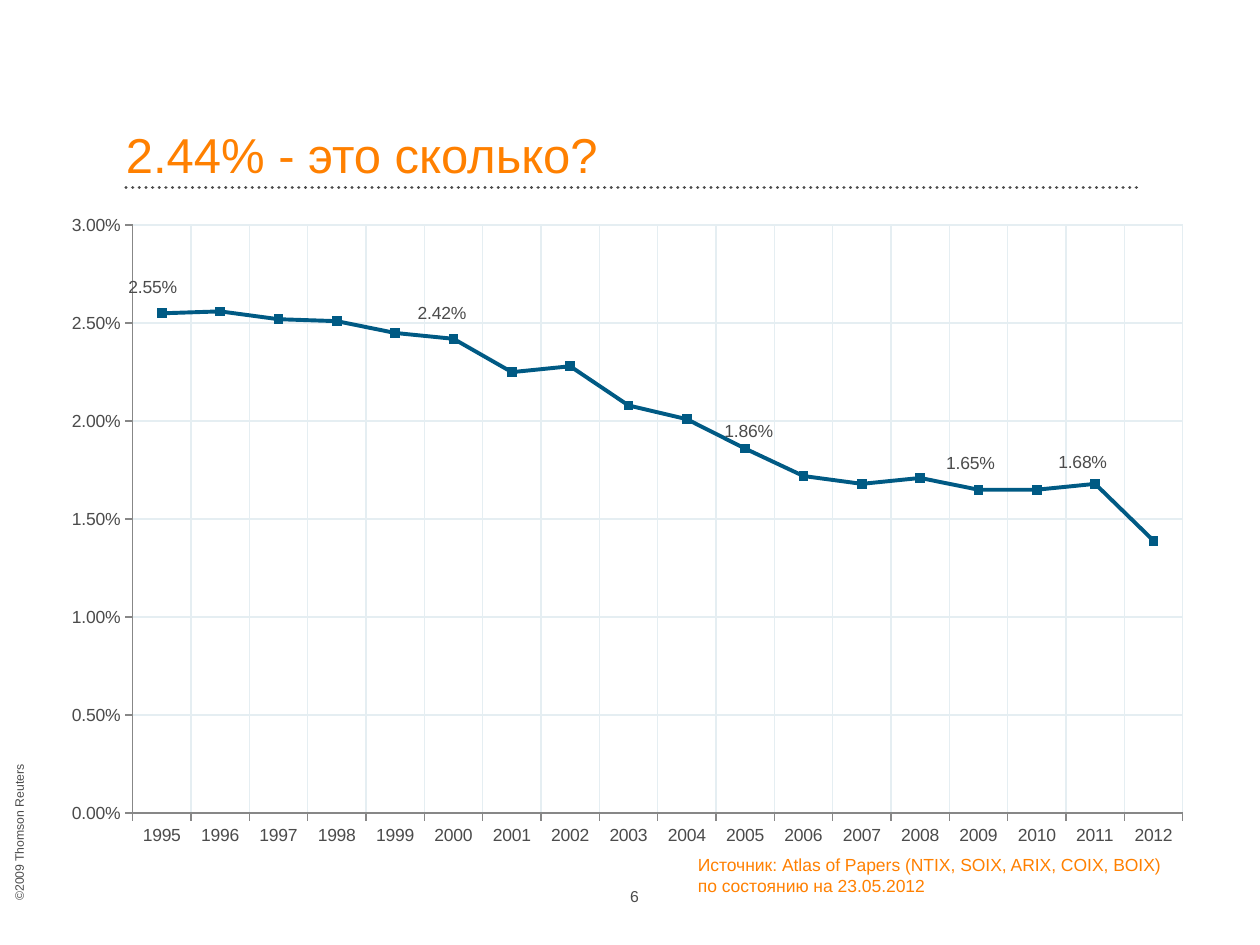
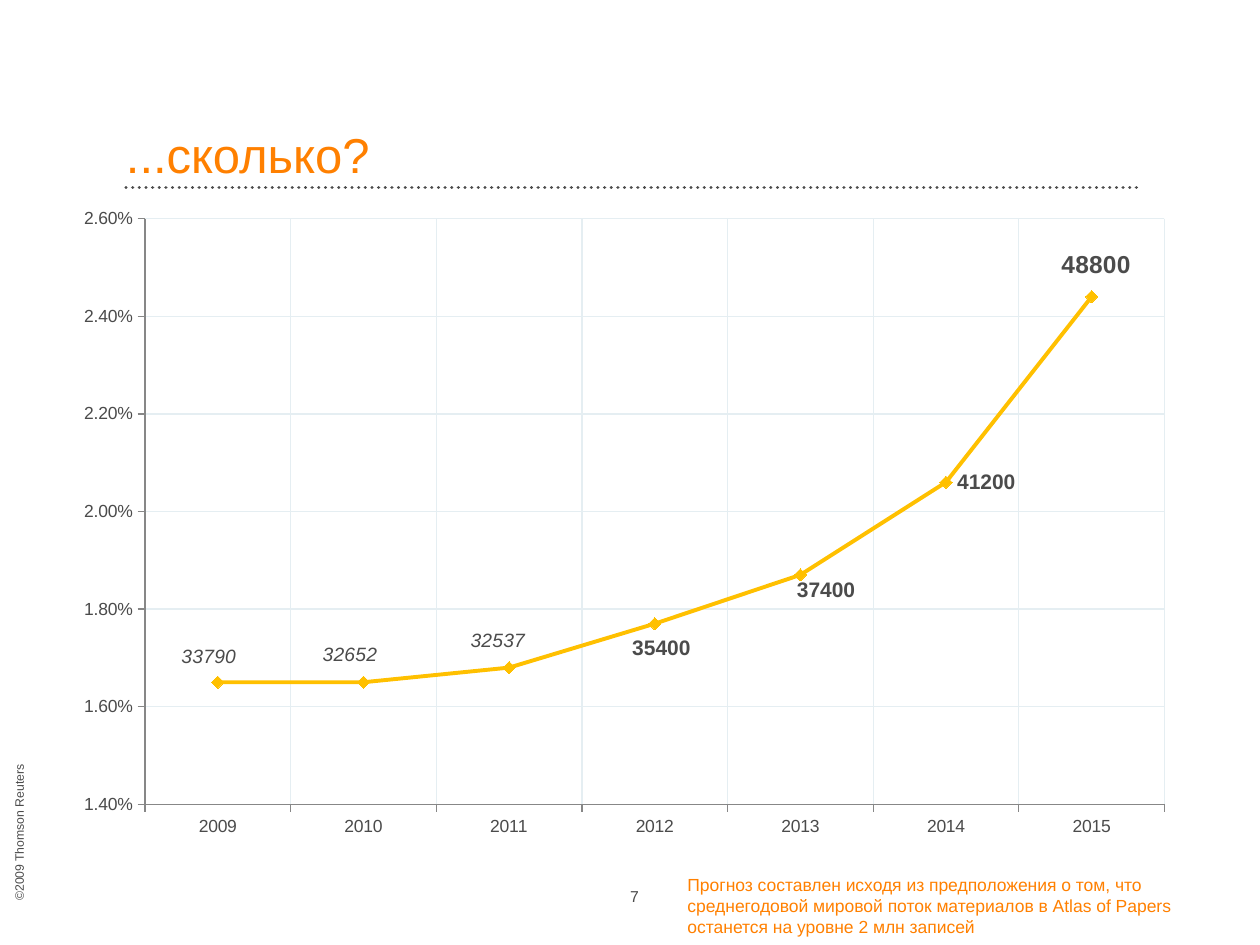
from pptx import Presentation
from pptx import util as u
from pptx.chart import data as chart_data
from pptx.dml.color import RGBColor
from pptx.enum import chart as charts, dml, shapes, text
from pptx.oxml import parse_xml
from pptx.oxml.ns import nsdecls

ORANGE = RGBColor(0xFF, 0x80, 0x00)
GREY = RGBColor(0x4B, 0x4B, 0x4B)
AXIS_GREY = RGBColor(0x87, 0x87, 0x87)
GRID_BLUE = RGBColor(0xE5, 0xEE, 0xF2)
BLUE = RGBColor(0x00, 0x5A, 0x84)
YELLOW = RGBColor(0xFF, 0xC0, 0x00)
FONT = "Arial"
PERCENT = "0.00%"
DATABASE = "Atlas of Papers"

ABOVE = charts.XL_LABEL_POSITION.ABOVE
BELOW = charts.XL_LABEL_POSITION.BELOW
RIGHT = charts.XL_LABEL_POSITION.RIGHT

NO_LEADER_LINES = (
    f'<c:extLst {nsdecls("c")}><c:ext uri="{{CE6537A1-D6FC-4f65-9D91-7224C49458BB}}" '
    'xmlns:c15="http://schemas.microsoft.com/office/drawing/2012/chart">'
    '<c15:showLeaderLines val="0"/></c:ext></c:extLst>')

WORLD_SHARE = [0.0255, 0.0256, 0.0252, 0.0251, 0.0245, 0.0242, 0.0225, 0.0228, 0.0208,
               0.0201, 0.0186, 0.0172, 0.0168, 0.0171, 0.0165, 0.0165, 0.0168, 0.0139]
FORECAST_SHARE = [0.0165, 0.0165, 0.0168, 0.0177, 0.0187, 0.0206, 0.0244]


def manual_layout(x, y, width=None, height=None):
    """Return a chart layout: an offset, or an inner plot frame if sized."""
    parts = {"x": x, "y": y}
    if width:
        parts = {"layoutTarget": "inner", "xMode": "edge", "yMode": "edge",
                 **parts, "w": width, "h": height}
    children = "".join(f'<c:{name} val="{value}"/>' for name, value in parts.items())
    return parse_xml(f'<c:layout {nsdecls("c")}><c:manualLayout>{children}'
                     '</c:manualLayout></c:layout>')


class Deck:
    """Hold the shared style and the current slide."""

    def __init__(self):
        self.presentation = Presentation()
        self.presentation.slide_width = u.Cm(25.4)
        self.presentation.slide_height = u.Cm(19.05)
        self.slide = None

    def style(self, font, size, color=GREY, bold=False, italic=False):
        """Apply the house font."""
        font.name, font.size, font.color.rgb = FONT, u.Pt(size), color
        font.bold, font.italic = bold, italic

    def add_text(self, content, frame, size, color=GREY, align=None):
        """Add a wrapped text box and return it."""
        box = self.slide.shapes.add_textbox(*map(u.Cm, frame))
        box.text_frame.word_wrap = True
        box.text_frame.text = content
        paragraph = box.text_frame.paragraphs[0]
        paragraph.alignment = align
        self.style(paragraph.runs[0].font, size, color)
        return box

    def add_rule(self):
        """Add the dotted line under the title."""
        rule = self.slide.shapes.add_connector(
            shapes.MSO_CONNECTOR.STRAIGHT, u.Cm(2.54), u.Cm(3.78), u.Cm(23.01), u.Cm(3.78))
        rule.line.color.rgb = GREY
        rule.line.width = u.Pt(1.9)
        rule.line.dash_style = dml.MSO_LINE.ROUND_DOT
        rule.element.spPr.xpath("a:ln")[0].set("cap", "rnd")
        rule.element.spPr.append(parse_xml(f'<a:effectLst {nsdecls("a")}/>'))

    def add_slide(self, title, number):
        """Start a slide with its title, rule, copyright and page number."""
        self.slide = self.presentation.slides.add_slide(self.presentation.slide_layouts[6])
        self.add_rule()
        notice = self.add_text("©2009 Thomson Reuters", (-1.9, 15.72, 4.57, 0.3), 7)
        notice.rotation = 270
        heading = self.add_text(title, (2.54, 1.4, 20.47, 2.31), 28, ORANGE)
        for box, right in ((notice, 0.51), (heading, 0)):
            frame = box.text_frame
            frame.margin_left = frame.margin_top = frame.margin_bottom = 0
            frame.margin_right = u.Cm(right)
        heading.text_frame.vertical_anchor = text.MSO_ANCHOR.BOTTOM
        heading.text_frame.paragraphs[0].line_spacing = 0.9
        self.add_text(str(number), (11.86, 17.75, 1.27, 0.64), 9, align=text.PP_ALIGN.RIGHT)

    def add_line_chart(self, frame, first_year, values, color, marker, scale):
        """Add a line chart of yearly shares and return it."""
        data = chart_data.CategoryChartData(number_format=PERCENT)
        data.categories = [str(first_year + index) for index in range(len(values))]
        data.add_series("Series 1", values)
        chart = self.slide.shapes.add_chart(
            charts.XL_CHART_TYPE.LINE_MARKERS, *map(u.Cm, frame), data).chart
        self.style(chart.font, 10)
        chart.has_legend = chart.has_title = False
        chart.plots[0].vary_by_categories = False
        plot_area = chart.element.xpath("c:chart/c:plotArea")[0]
        for layout in plot_area.xpath("c:layout"):
            plot_area.remove(layout)
        plot_area.insert(0, manual_layout(0.073, 0.034, 0.907, 0.896))
        for axis in (chart.category_axis, chart.value_axis):
            axis.has_major_gridlines = True
            axis.major_gridlines.format.line.color.rgb = GRID_BLUE
            axis.major_gridlines.format.line.width = u.Pt(0.75)
            axis.major_tick_mark = charts.XL_TICK_MARK.OUTSIDE
            axis.format.line.color.rgb = AXIS_GREY
            self.style(axis.tick_labels.font, 10)
        axis = chart.value_axis
        axis.minimum_scale, axis.maximum_scale, axis.major_unit = scale
        axis.tick_labels.number_format = PERCENT
        axis.tick_labels.number_format_is_linked = False
        series = chart.plots[0].series[0]
        series.smooth = False
        series.format.line.color.rgb = color
        series.format.line.width = u.Pt(2.25)
        series.marker.style, series.marker.size = marker
        series.marker.format.fill.solid()
        series.marker.format.fill.fore_color.rgb = color
        series.marker.format.line.color.rgb = color
        series.data_labels.show_value = False
        chart.element.xpath(".//c:ser/c:dLbls")[0].append(parse_xml(NO_LEADER_LINES))
        return chart

    def add_label(self, chart, index, offset, position=ABOVE, content=None, size=10, **look):
        """Label one point with its value or with the given text."""
        label = chart.plots[0].series[0].points[index].data_label
        if content:
            label.text_frame.text = content
            self.style(label.text_frame.paragraphs[0].runs[0].font, size, **look)
        else:
            self.style(label.font, size, **look)
        label.position = position
        anchor = chart.element.xpath(f'.//c:dLbl/c:idx[@val="{index}"]')[0]
        anchor.addnext(manual_layout(*offset))


def main():
    """Build both slides."""
    deck = Deck()

    deck.add_slide("2.44% - это сколько?", 6)
    chart = deck.add_line_chart((0.97, 4.09, 23.34, 13.23), 1995, WORLD_SHARE, BLUE,
                                (charts.XL_MARKER_STYLE.SQUARE, 5), (0, 0.03, 0.005))
    value_labels = {0: (-0.008, -0.01), 5: (-0.01, -0.009), 10: (0.003, 0.003),
                    14: (-0.007, -0.01), 16: (-0.011, -0.004)}
    for index, offset in value_labels.items():
        deck.add_label(chart, index, offset)
    deck.add_text(f"Источник: {DATABASE} (NTIX, SOIX, ARIX, COIX, BOIX) "
                  "по состоянию на 23.05.2012", (13.82, 17.09, 10.24, 1.12), 10, ORANGE)

    deck.add_slide("...сколько?", 7)
    deck.add_text("Прогноз составлен исходя из предположения о том, что среднегодовой "
                  f"мировой поток материалов в {DATABASE} останется на уровне "
                  "2 млн записей", (13.61, 17.5, 11.3, 1.55), 10, ORANGE)
    chart = deck.add_line_chart((1.27, 3.96, 22.66, 13.18), 2009, FORECAST_SHARE, YELLOW,
                                (charts.XL_MARKER_STYLE.DIAMOND, 7), (0.014, 0.026, 0.002))
    actual, forecast = {"size": 11, "italic": True}, {"size": 12, "bold": True}
    record_labels = [
        ("33790", (-0.008, -0.006), ABOVE, actual),
        ("32652", (-0.012, -0.008), ABOVE, actual),
        ("32537", (-0.01, -0.008), ABOVE, actual),
        ("35400", (0.006, 0.003), BELOW, forecast),
        ("37400", (-0.013, 0.023), RIGHT, forecast),
        ("41200", (0, 0), RIGHT, forecast),
        ("48800", (0.004, -0.01), ABOVE, {"size": 14, "bold": True}),
    ]
    for index, (content, offset, position, look) in enumerate(record_labels):
        deck.add_label(chart, index, offset, position, content, **look)

    deck.presentation.save("out.pptx")


if __name__ == "__main__":
    main()
